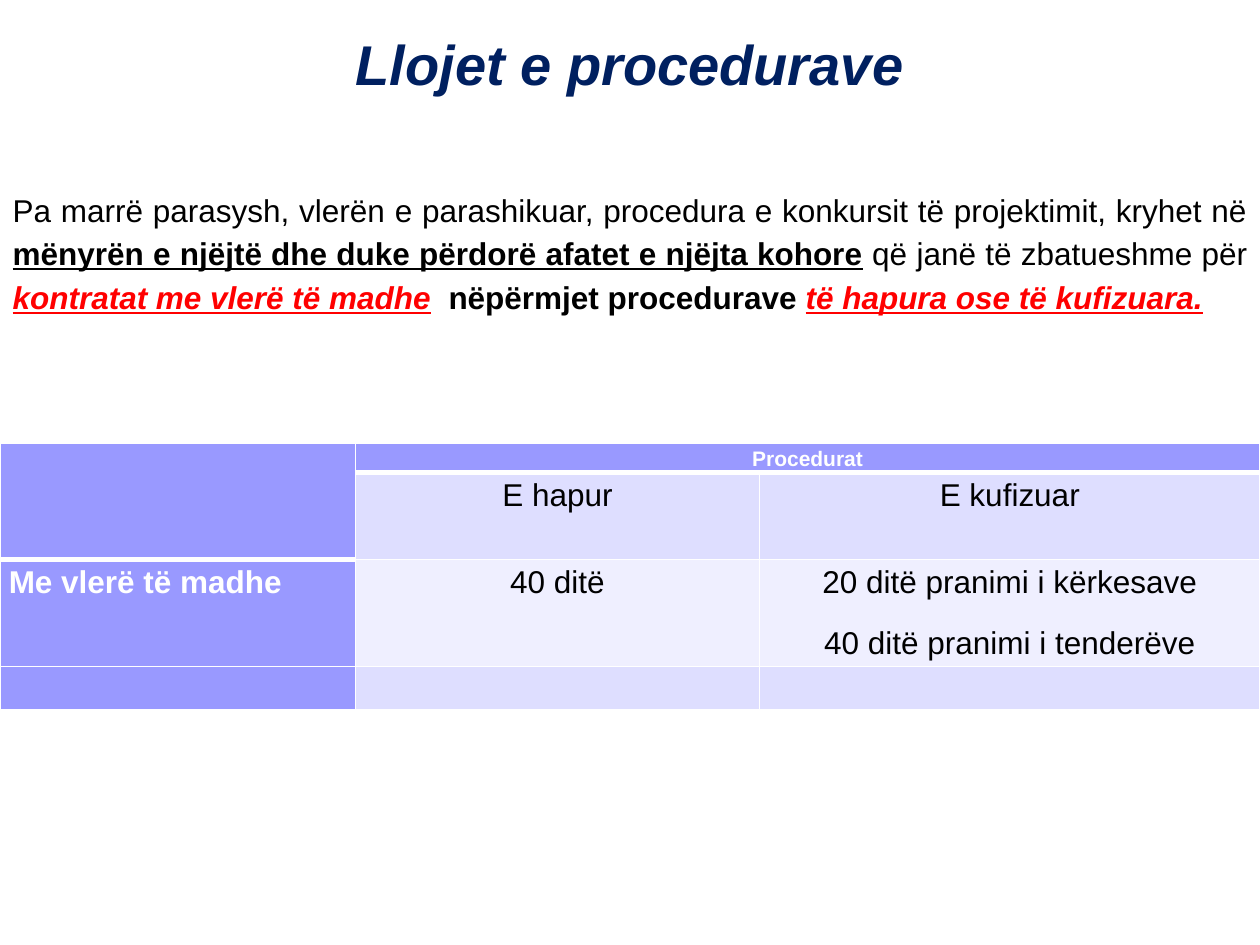
"""Build the slide on procedure types, with its table of deadlines."""
from dataclasses import dataclass

from lxml import etree
from pptx import Presentation
from pptx import util as u
from pptx.dml.color import RGBColor
from pptx.enum import text as t
from pptx.oxml import ns

NAVY = RGBColor(0x00, 0x20, 0x60)
BLACK = RGBColor(0x00, 0x00, 0x00)
RED = RGBColor(0xFF, 0x00, 0x00)
WHITE = RGBColor(0xFF, 0xFF, 0xFF)
VIOLET = RGBColor(0x99, 0x99, 0xFF)
LILAC = RGBColor(0xDE, 0xDE, 0xFF)
PALE = RGBColor(0xEF, 0xEF, 0xFF)

COLUMN_WIDTHS = (2.82, 3.21, 3.97)
ROW_HEIGHTS = (0.23, 0.69, 0.85, 0.34)
HEADER_ROWS = (2, 1, 1)


@dataclass(frozen=True)
class CellContent:
    fill: RGBColor
    lines: tuple[str, ...] = ()
    size: int = 18
    color: RGBColor = BLACK
    bold: bool = False
    align: t.PP_ALIGN = t.PP_ALIGN.CENTER


TABLE_ROWS = (
    (CellContent(VIOLET),
     CellContent(VIOLET, ("Procedurat",), size=12, color=WHITE, bold=True),
     CellContent(VIOLET)),
    (CellContent(VIOLET),
     CellContent(LILAC, ("E hapur",)),
     CellContent(LILAC, ("E kufizuar",))),
    (CellContent(VIOLET, ("Me vlerë të madhe",), color=WHITE, bold=True,
                 align=t.PP_ALIGN.JUSTIFY),
     CellContent(PALE, ("40 ditë",)),
     CellContent(PALE, ("20 ditë pranimi i kërkesave",
                        "40 ditë pranimi i tenderëve"))),
    (CellContent(VIOLET), CellContent(LILAC), CellContent(LILAC)),
)

BODY_RUNS = (
    ("Pa marrë parasysh, vlerën e parashikuar, procedura e konkursit "
     "të projektimit, kryhet në ", {}),
    ("mënyrën e njëjtë dhe duke përdorë afatet e njëjta kohore",
     {"bold": True, "underline": True}),
    (" që janë të zbatueshme për ", {}),
    ("kontratat me vlerë të madhe",
     {"color": RED, "bold": True, "italic": True, "underline": True}),
    ("  ", {}),
    ("nëpërmjet procedurave ", {"bold": True}),
    ("të hapura ose të kufizuara.",
     {"color": RED, "bold": True, "italic": True, "underline": True}),
)


def add_text(paragraph, text: str, *, size: int = 18, color: RGBColor = BLACK,
             bold: bool = False, italic: bool = False,
             underline: bool = False) -> None:
    run = paragraph.add_run()
    run.text = text
    font = run.font
    font.name, font.size, font.color.rgb = "Arial", u.Pt(size), color
    font.bold, font.italic, font.underline = bold, italic, underline


def place(shape, left: float, top: float, width: float, height: float,
          anchor: t.MSO_ANCHOR) -> None:
    shape.left, shape.top = u.Inches(left), u.Inches(top)
    shape.width, shape.height = u.Inches(width), u.Inches(height)
    frame = shape.text_frame
    frame.auto_size = t.MSO_AUTO_SIZE.NONE
    frame.word_wrap = True
    frame.vertical_anchor = anchor


def set_borders(cell, widths: dict[str, int]) -> None:
    properties = cell._tc.get_or_add_tcPr()
    for index, (side, width) in enumerate(widths.items()):
        line = etree.Element(ns.qn(f"a:ln{side}"), w=str(u.Pt(width)))
        fill = etree.SubElement(line, ns.qn("a:solidFill"))
        etree.SubElement(fill, ns.qn("a:srgbClr"), val=str(WHITE))
        properties.insert(index, line)


def fill_cell(cell, content: CellContent) -> None:
    cell.margin_left = cell.margin_right = u.Inches(0.07)
    cell.margin_top = cell.margin_bottom = 0
    cell.fill.solid()
    cell.fill.fore_color.rgb = content.fill
    frame = cell.text_frame
    for index, line in enumerate(content.lines):
        paragraph = frame.add_paragraph() if index else frame.paragraphs[0]
        paragraph.alignment = content.align
        paragraph.line_spacing = 1.15
        paragraph.space_before = u.Pt(12 if index else 0)
        add_text(paragraph, line, size=content.size, color=content.color,
                 bold=content.bold)


def add_deadline_table(slide) -> None:
    table = slide.shapes.add_table(
        len(ROW_HEIGHTS), len(COLUMN_WIDTHS), u.Inches(0), u.Inches(3.52),
        u.Inches(sum(COLUMN_WIDTHS)), u.Inches(sum(ROW_HEIGHTS))).table
    table.first_row = table.horz_banding = False
    for column, width in zip(table.columns, COLUMN_WIDTHS):
        column.width = u.Inches(width)
    for row, height in zip(table.rows, ROW_HEIGHTS):
        row.height = u.Inches(height)
    table.cell(0, 0).merge(table.cell(1, 0))
    table.cell(0, 1).merge(table.cell(0, 2))
    for row_index, contents in enumerate(TABLE_ROWS):
        for column_index, content in enumerate(contents):
            cell = table.cell(row_index, column_index)
            fill_cell(cell, content)
            header_rows = HEADER_ROWS[column_index]
            ends_header = cell.is_merge_origin or row_index == header_rows - 1
            set_borders(cell, {"L": 1, "R": 1,
                               "T": 3 if row_index == header_rows else 1,
                               "B": 3 if ends_header else 1})


def main() -> None:
    presentation = Presentation()
    presentation.slide_width = u.Inches(10)
    presentation.slide_height = u.Inches(7.5)
    slide = presentation.slides.add_slide(presentation.slide_layouts[1])

    title = slide.shapes.title
    place(title, 0, 0.1, 10, 0.8, t.MSO_ANCHOR.MIDDLE)
    heading = title.text_frame.paragraphs[0]
    heading.alignment = t.PP_ALIGN.CENTER
    add_text(heading, "Llojet e procedurave", size=32, color=NAVY,
             bold=True, italic=True)

    body = slide.placeholders[1]
    place(body, 0, 1.42, 10, 1.66, t.MSO_ANCHOR.TOP)
    paragraph = body.text_frame.paragraphs[0]
    properties = paragraph._p.get_or_add_pPr()
    properties.set("marL", "0")
    properties.set("indent", "0")
    etree.SubElement(properties, ns.qn("a:buNone"))
    paragraph.alignment = t.PP_ALIGN.JUSTIFY
    paragraph.line_spacing = 1.15
    paragraph.space_before = u.Pt(0)
    for text, style in BODY_RUNS:
        add_text(paragraph, text, **style)

    add_deadline_table(slide)
    presentation.save("out.pptx")


if __name__ == "__main__":
    main()
